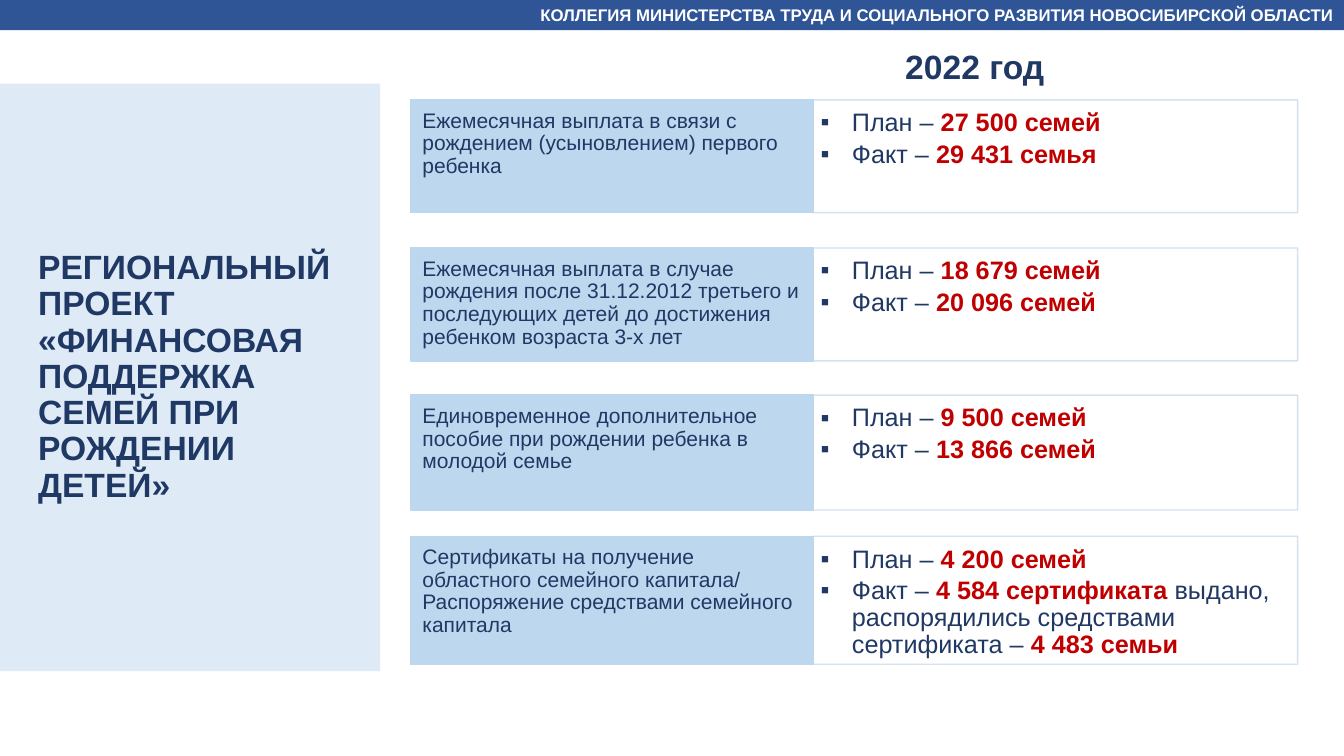
from lxml import etree
from pptx import Presentation
from pptx.dml.color import RGBColor
from pptx.enum.shapes import MSO_SHAPE
from pptx.enum.text import MSO_ANCHOR, PP_ALIGN
from pptx.oxml.ns import qn
from pptx.util import Inches, Pt

RECT = MSO_SHAPE.RECTANGLE
TOP, MIDDLE = MSO_ANCHOR.TOP, MSO_ANCHOR.MIDDLE
LEFT, RIGHT = PP_ALIGN.LEFT, PP_ALIGN.RIGHT
NAVY, RED, WHITE = "203864", "C00000", "FFFFFF"
PALE, SKY, BLUE, EDGE = "DEEBF7", "BDD7EE", "2F5597", "D2DEEF"

deck = Presentation()
deck.slide_width, deck.slide_height = Inches(13.33), Inches(7.5)
slide = deck.slides.add_slide(deck.slide_layouts[6])


def paint(fill, color, alpha=100):
    fill.solid()
    fill.fore_color.rgb = RGBColor.from_string(color)
    if alpha < 100:
        for node in fill._xPr.iter(qn("a:srgbClr")):
            etree.SubElement(node, qn("a:alpha"), val=str(alpha * 1000))


def add_box(at, lines=(), size=18, color=NAVY, bold=False, fill=None, edge=None,
            alpha=100, pads=(0.1, 0.05, 0.1, 0.05), anchor=TOP, align=LEFT,
            space=None, after=0, bullet=None):
    """Add a box; in each line the text between * marks is bold red."""
    place = [Inches(n) for n in at]
    if fill:
        box = slide.shapes.add_shape(RECT, *place)
        box.shadow.inherit = False
        paint(box.fill, fill, alpha)
        if edge:
            paint(box.line.fill, edge, alpha)
            box.line.width = Pt(1)
        else:
            box.line.fill.background()
    else:
        box = slide.shapes.add_textbox(*place)
    frame = box.text_frame
    frame.word_wrap = True
    frame.vertical_anchor = anchor
    for side, pad in zip(("left", "top", "right", "bottom"), pads):
        setattr(frame, "margin_" + side, Inches(pad))
    for i, line in enumerate(lines):
        para = frame.add_paragraph() if i else frame.paragraphs[0]
        looks = {"alignment": align, "line_spacing": space, "space_after": Pt(after)}
        for name, value in looks.items():
            setattr(para, name, value)
        if bullet:
            props = para._p.get_or_add_pPr()
            props.set("marL", str(Inches(0.31)))
            props.set("indent", str(-Inches(0.31)))
            etree.SubElement(props, qn("a:buFont"), typeface="Arial")
            etree.SubElement(props, qn("a:buChar"), char=bullet)
        for j, text in enumerate(line.split("*")):
            if not text:
                continue
            run = para.add_run()
            run.text = text
            marked = j % 2 == 1
            font = {"name": "Arial", "size": Pt(size), "bold": bold or marked}
            for name, value in font.items():
                setattr(run.font, name, value)
            paint(run.font.fill, RED if marked else color)


add_box((0, 0.83, 3.77, 5.83), fill=PALE)
add_box((0.28, 2.42, 3.22, 2.65),
        ["РЕГИОНАЛЬНЫЙ ПРОЕКТ «ФИНАНСОВАЯ ПОДДЕРЖКА СЕМЕЙ ПРИ РОЖДЕНИИ ДЕТЕЙ»"],
        size=24, bold=True, anchor=MIDDLE, space=0.9)

rows = [
    (0.99, 1.12, "Ежемесячная выплата в связи с рождением (усыновлением) первого ребенка",
     ["План – *27 500 семей*", "Факт – *29 431 семья*"]),
    (2.46, 1.12, "Ежемесячная выплата в случае рождения после 31.12.2012 третьего и "
     "последующих детей до достижения ребенком возраста 3-х лет",
     ["План – *18 679 семей*", "Факт – *20 096 семей*"]),
    (3.92, 1.14, "Единовременное дополнительное пособие при рождении ребенка в молодой семье",
     ["План – *9 500 семей*", "Факт – *13 866 семей*"]),
    (5.32, 1.27, "Сертификаты на получение областного семейного капитала/ "
     "Распоряжение средствами семейного капитала",
     ["План – *4 200 семей*",
      "Факт – *4 584 сертификата *выдано, распорядились средствами сертификата – "
      "*4 483 семьи*"]),
]
for top, high, label, facts in rows:
    add_box((8.06, top, 4.81, high), facts, fill=WHITE, edge=EDGE, alpha=90,
            pads=(0.08, 0.1, 0.14, 0.1), space=0.9, after=3, bullet="▪")
    add_box((4.07, top, 4, high), [label], size=15, fill=SKY, edge=SKY,
            pads=(0.12, 0.1, 0.12, 0.1), space=0.9)

add_box((0, 0, 13.33, 0.3),
        ["КОЛЛЕГИЯ МИНИСТЕРСТВА ТРУДА И СОЦИАЛЬНОГО РАЗВИТИЯ НОВОСИБИРСКОЙ ОБЛАСТИ"],
        size=12, color=WHITE, bold=True, fill=BLUE, anchor=MIDDLE, align=RIGHT)
add_box((8.88, 0.41, 3.35, 0.5), ["2022 год"], size=24, bold=True)

deck.save("out.pptx")
